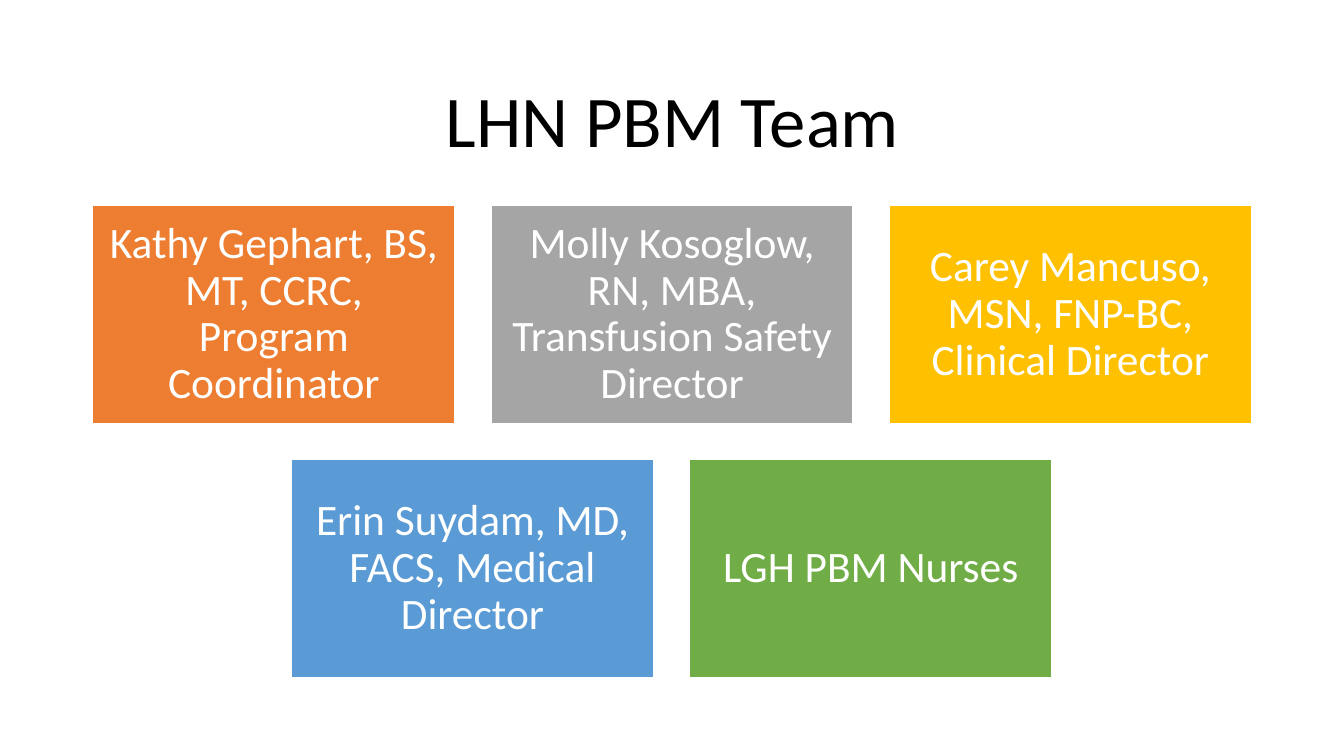
import pptx
import pptx.util
import pptx.dml.color
import pptx.enum.shapes
import pptx.enum.text

PX = 9144
WIDE, HIGH = 1333, 750
THEME = {
    "font": "Calibri",
    "title": 52,
    "body": 31,
    "black": "000000",
    "white": "FFFFFF",
    "orange": "ED7D31",
    "gray": "A5A5A5",
    "gold": "FFC000",
    "blue": "5B9BD5",
    "green": "70AD47",
}
TEAM = [
    [
        ("Kathy Gephart, BS, MT, CCRC, Program Coordinator", "orange"),
        ("Molly Kosoglow, RN, MBA, Transfusion Safety Director", "gray"),
        ("Carey Mancuso, MSN, FNP-BC, Clinical Director", "gold"),
    ],
    [
        ("Erin Suydam, MD, FACS, Medical Director", "blue"),
        ("LGH PBM Nurses", "green"),
    ],
]


def color(name):
    return pptx.dml.color.RGBColor.from_string(THEME[name])


def write(shape, text, size, ink, inset):
    frame = shape.text_frame
    frame.text = text
    frame.word_wrap = True
    frame.vertical_anchor = pptx.enum.text.MSO_ANCHOR.MIDDLE
    frame.margin_left = frame.margin_right = inset * PX
    frame.margin_top = frame.margin_bottom = inset * PX
    para = frame.paragraphs[0]
    para.alignment = pptx.enum.text.PP_ALIGN.CENTER
    para.line_spacing = 0.9
    font = para.runs[0].font
    font.name = THEME["font"]
    font.size = pptx.util.Pt(THEME[size])
    font.color.rgb = color(ink)


deck = pptx.Presentation()
deck.slide_width = WIDE * PX
deck.slide_height = HIGH * PX
slide = deck.slides.add_slide(deck.slide_layouts[6])

title = slide.shapes.add_textbox(92 * PX, 61 * PX, 1150 * PX, 124 * PX)
write(title, "LHN PBM Team", "title", "black", 10)

card_w, card_h = 359, 216
gap = 36
top = 204
for row in TEAM:
    span = len(row) * (card_w + gap) - gap
    left = (WIDE - span) // 2
    for text, fill in row:
        card = slide.shapes.add_shape(
            pptx.enum.shapes.MSO_SHAPE.RECTANGLE,
            left * PX, top * PX, card_w * PX, card_h * PX,
        )
        card.shadow.inherit = False
        card.fill.solid()
        card.fill.fore_color.rgb = color(fill)
        card.line.color.rgb = color("white")
        card.line.width = pptx.util.Pt(1)
        write(card, text, "body", "white", 13)
        left += card_w + gap
    top += card_h + gap

deck.save("out.pptx")
